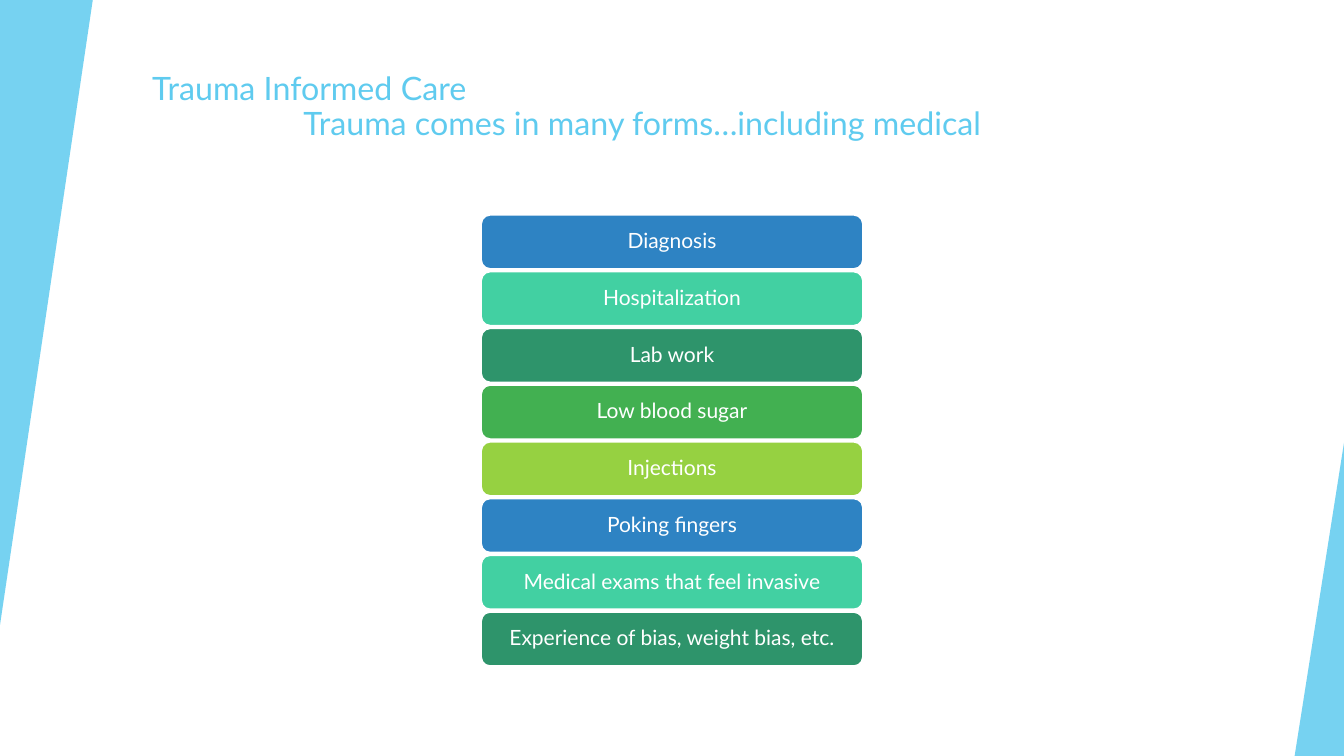
from dataclasses import dataclass
from itertools import cycle

from lxml.etree import SubElement
from pptx import Presentation
from pptx.dml.color import RGBColor
from pptx.enum.shapes import MSO_SHAPE
from pptx.enum.text import MSO_ANCHOR, PP_ALIGN
from pptx.oxml.ns import qn
from pptx.util import Inches, Pt


@dataclass(frozen=True)
class Theme:
    font: str = "Lato"
    sky: str = "5FCBEF"
    white: str = "FFFFFF"
    bars: tuple = ("2E83C3", "42D0A2", "2E946B", "42B051", "96D141")
    title_size: int = 23
    bar_size: int = 15


THEME = Theme()
TITLE_LINES = (
    ("Trauma Informed Care", 0),
    ("Trauma comes in many forms…including medical", 1.5),
)
TRAUMA_FORMS = (
    "Diagnosis",
    "Hospitalization",
    "Lab work",
    "Low blood sugar",
    "Injections",
    "Poking fingers",
    "Medical exams that feel invasive",
    "Experience of bias, weight bias, etc.",
)
BAR_LEFT, BAR_WIDTH, BAR_HEIGHT = 4.77, 3.79, 0.54
FIRST_BAR_TOP, LAST_BAR_TOP = 2.13, 6.07


def write(paragraph, text, *, size, color, align=PP_ALIGN.LEFT, indent=0):
    paragraph.alignment = align
    paragraph.line_spacing = 0.9
    if indent:
        paragraph._p.get_or_add_pPr().set("marL", str(Inches(indent)))
    run = paragraph.add_run()
    run.text = text
    run.font.name = THEME.font
    run.font.size = Pt(size)
    run.font.color.rgb = RGBColor.from_string(color)


def add_filled(slide, preset, left, top, width, height, color):
    shape = slide.shapes.add_shape(
        preset, Inches(left), Inches(top), Inches(width), Inches(height))
    shape.shadow.inherit = False
    shape.fill.solid()
    shape.fill.fore_color.rgb = RGBColor.from_string(color)
    shape.line.fill.background()
    return shape


def add_edge_wedge(slide, left, top, width, height, rotation=0):
    """Add a translucent right triangle along a side of the slide."""
    wedge = add_filled(slide, MSO_SHAPE.ISOSCELES_TRIANGLE,
                       left, top, width, height, THEME.sky)
    wedge.adjustments[0] = 1
    wedge.rotation = rotation
    color = wedge._element.spPr.find(qn("a:solidFill"))[0]
    SubElement(color, qn("a:alpha")).set("val", "85000")


def add_title(slide):
    title = slide.shapes.add_textbox(
        Inches(1.41), Inches(0.67), Inches(11.15), Inches(1.2))
    frame = title.text_frame
    frame.word_wrap = True
    for number, (line, indent) in enumerate(TITLE_LINES):
        paragraph = frame.add_paragraph() if number else frame.paragraphs[0]
        write(paragraph, line, size=THEME.title_size, color=THEME.sky,
              indent=indent)


def add_bar(slide, label, top, color):
    bar = add_filled(slide, MSO_SHAPE.ROUNDED_RECTANGLE,
                     BAR_LEFT, top, BAR_WIDTH, BAR_HEIGHT, color)
    bar.line.color.rgb = RGBColor.from_string(THEME.white)
    bar.line.width = Pt(1.5)
    frame = bar.text_frame
    frame.word_wrap = True
    frame.vertical_anchor = MSO_ANCHOR.MIDDLE
    frame.margin_left = frame.margin_right = Inches(0.06)
    frame.margin_top = frame.margin_bottom = Inches(0.03)
    write(frame.paragraphs[0], label, size=THEME.bar_size,
          color=THEME.white, align=PP_ALIGN.CENTER)


def main():
    deck = Presentation()
    deck.slide_width, deck.slide_height = Inches(13.33), Inches(7.5)
    slide = deck.slides.add_slide(deck.slide_layouts[6])
    slide.background.fill.solid()
    slide.background.fill.fore_color.rgb = RGBColor.from_string(THEME.white)

    add_title(slide)
    add_edge_wedge(slide, 0, 0, 0.92, 6.2, rotation=180)
    add_edge_wedge(slide, 12.84, 4.39, 0.49, 3.11)

    pitch = (LAST_BAR_TOP - FIRST_BAR_TOP) / (len(TRAUMA_FORMS) - 1)
    for row, (label, color) in enumerate(zip(TRAUMA_FORMS, cycle(THEME.bars))):
        add_bar(slide, label, FIRST_BAR_TOP + row * pitch, color)

    deck.save("out.pptx")


if __name__ == "__main__":
    main()
